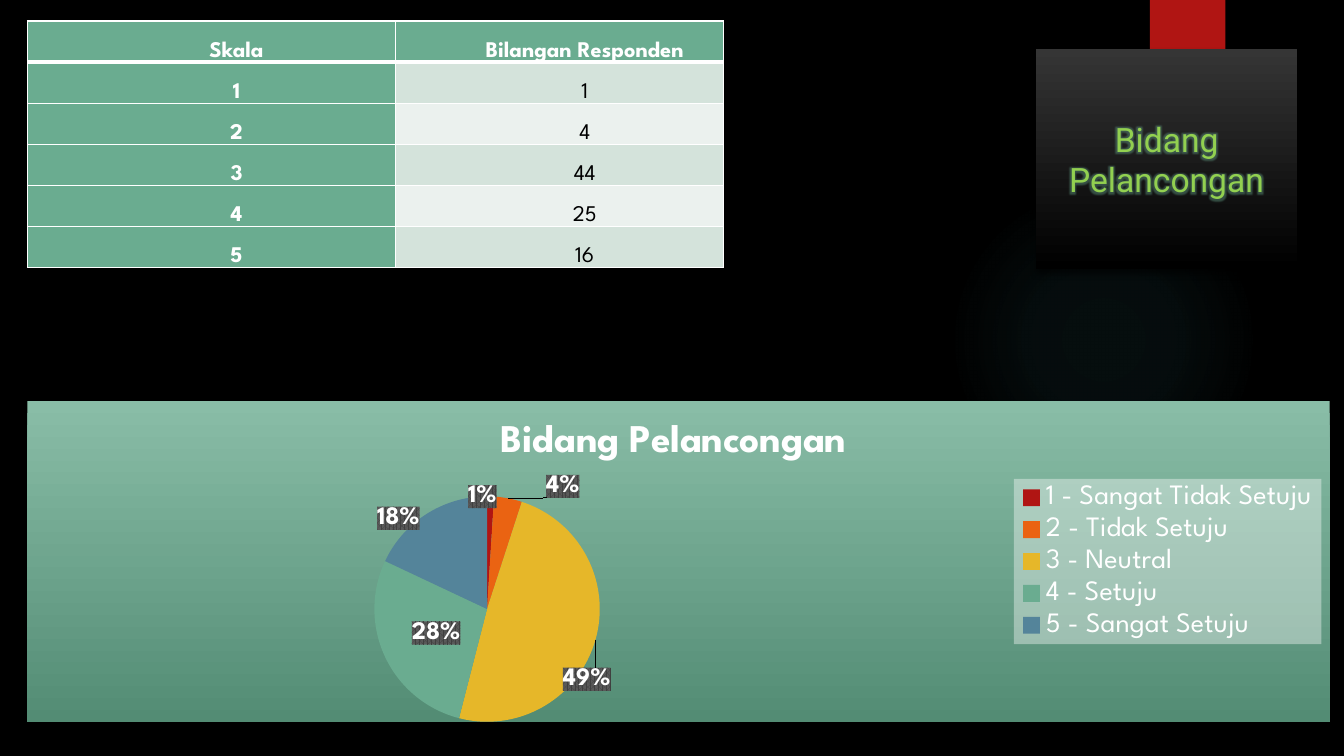
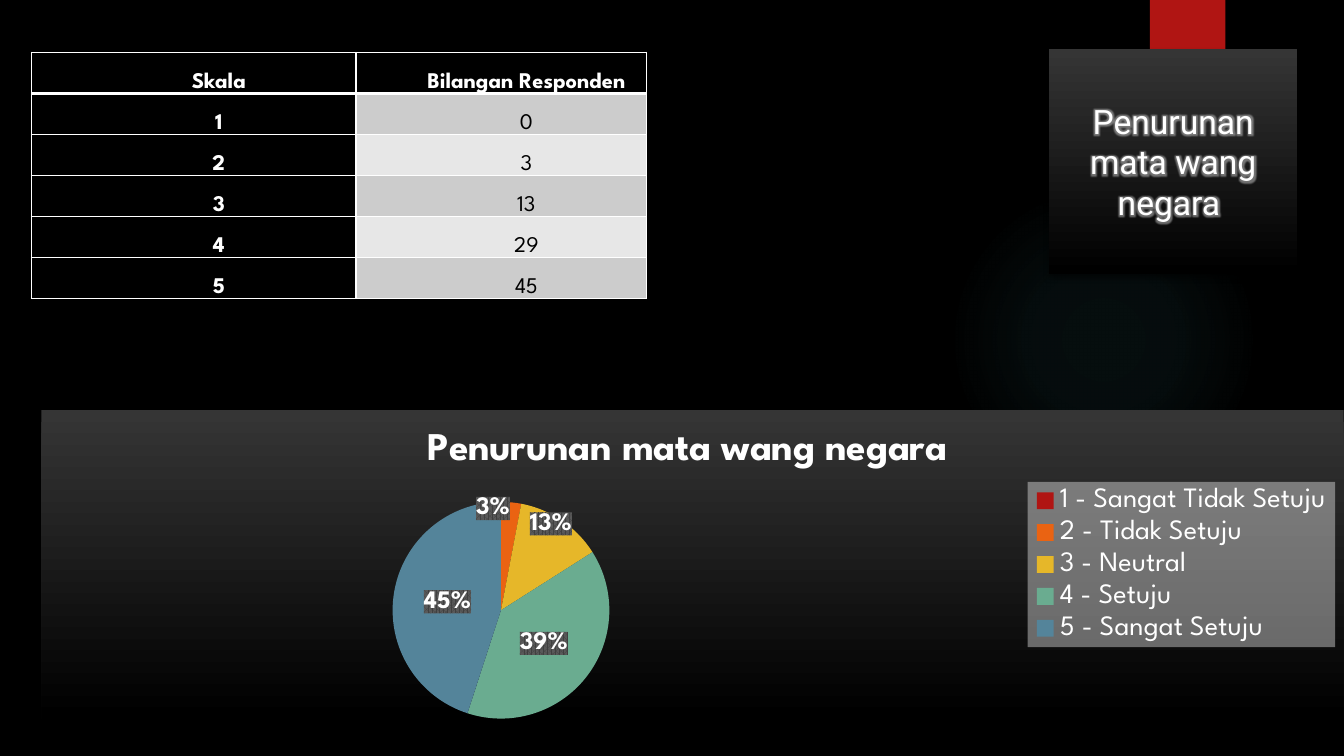
from copy import deepcopy

from pptx import Presentation
from pptx import oxml
from pptx import util as u
from pptx.chart import data as chart_data
from pptx.dml import color
from pptx.enum import chart as charts
from pptx.enum import shapes, text
from pptx.oxml import ns

COLORS = {
    "black": "000000", "white": "FFFFFF", "red": "B01513", "orange": "EA6312",
    "yellow": "E6B729", "green": "6AAC90", "blue": "54849A", "teal": "50B9C1",
    "lime": "92D050", "charcoal": "353535", "mint": "89BDA7", "moss": "538C74",
    "green_odd": "D4E3DB", "green_even": "EBF1EE", "grey_odd": "CCCCCC",
    "grey_even": "E7E7E7", "label_dark": "404040", "label_light": "595959",
}
HEADING_FONT, BODY_FONT = "Roboto", "League Spartan"
SCALE = ["1 - Sangat Tidak Setuju", "2 - Tidak Setuju", "3 - Neutral",
         "4 - Setuju", "5 - Sangat Setuju"]
SLICES = ["red", "orange", "yellow", "green", "blue"]
DARK = ("charcoal", "black")

# Boxes are left, top, width, height in centimetres. Each label shift is
# a share of the chart's size; None removes the label.
TOPICS = [
    dict(title="Bidang Pelancongan", title_box=(26.11, 1.24, 6.58, 5.54),
         title_color="lime", glow="green",
         table_at=(0.69, 0.53), columns=(9.27, 8.28), counts=[1, 4, 44, 25, 16],
         table_colors=("green", "green_odd", "green_even"),
         chart_title="Bidang Pelancongan ", chart_box=(0.69, 10.11, 32.82, 8.08),
         chart_fill=("mint", "moss"), shares=[1, 4, 49, 28, 18],
         shifts={0: (-0.005, -0.175), 1: (0.05, -0.21),
                 2: (0.035, 0.17), 4: (-0.045, -0.135)}),
    dict(title="Penurunan mata wang negara ", title_box=(26.44, 1.24, 6.25, 5.66),
         title_color="white", glow="white",
         table_at=(0.79, 1.32), columns=(8.18, 7.32), counts=[0, 3, 13, 29, 45],
         table_colors=("black", "grey_odd", "grey_even"),
         chart_title="Penurunan mata wang negara ", chart_box=(1.04, 10.34, 32.82, 7.77),
         chart_fill=DARK, shares=[0, 3, 13, 39, 45],
         shifts={0: None, 1: (-0.01, -0.155), 2: (0.015, -0.135)}),
]


# Shared helpers
def rgb(name):
    return color.RGBColor.from_string(COLORS[name])


def cm(values):
    return [u.Cm(value) for value in values]


def element(tag, inner="", attributes=""):
    return oxml.parse_xml(f"<{tag} {ns.nsdecls('a', 'c')} {attributes}>{inner}</{tag}>")


def color_xml(name, alpha=100):
    return f'<a:srgbClr val="{COLORS[name]}"><a:alpha val="{alpha * 1000}"/></a:srgbClr>'


def gradient_xml(stops, direction='<a:lin ang="5400000" scaled="0"/>'):
    """Stops are (position, colour, alpha)."""
    marks = "".join(f'<a:gs pos="{position * 1000}">{color_xml(name, alpha)}</a:gs>'
                    for position, name, alpha in stops)
    return f"<a:gradFill {ns.nsdecls('a')}><a:gsLst>{marks}</a:gsLst>{direction}</a:gradFill>"


def vertical_xml(names):
    return gradient_xml([(0, names[0], 100), (100, names[1], 100)])


def add_shadow(shape, alpha, blur, distance):
    shape.element.spPr.append(element(
        "a:effectLst",
        f'<a:outerShdw blurRad="{u.Pt(blur)}" dist="{u.Pt(distance)}" dir="5400000" '
        f'algn="ctr" rotWithShape="0">{color_xml("black", alpha)}</a:outerShdw>'))


def style_font(font, size, name, fill, bold=False):
    font.size, font.name, font.bold = u.Pt(size), name, bold
    font.color.rgb = rgb(fill)


def write(frame, content, *, size, font, fill, bold=False, align=text.PP_ALIGN.CENTER,
          spacing=None, indent=0):
    para = frame.paragraphs[0]
    para.alignment = align
    if spacing:
        para.line_spacing = spacing
    if indent:
        properties = para._p.get_or_add_pPr()
        properties.set("marL", str(u.Cm(indent)))
        properties.set("indent", "0")
    span = para.add_run()
    span.text = content
    style_font(span.font, size, font, fill, bold)
    return span


# Background, soft light and red ribbon, kept on the layout
def dress_layout(deck, page):
    background = deck.slide_master.background.fill
    background.solid()
    background.fore_color.rgb = rgb("black")

    light = page.shapes.add_shape(shapes.MSO_SHAPE.OVAL, *cm((23.9, 4.65, 7.82, 7.82)))
    center = ('<a:path path="circle"><a:fillToRect l="50000" t="50000" '
              'r="50000" b="50000"/></a:path>')
    light.element.spPr.append(oxml.parse_xml(gradient_xml(
        [(0, "teal", 7), (36, "teal", 6), (69, "teal", 0)], center)))
    light.shadow.inherit = False

    ribbon = page.shapes.add_shape(shapes.MSO_SHAPE.RECTANGLE, *cm((28.98, 0, 1.9, 3.17)))
    ribbon.fill.solid()
    ribbon.fill.fore_color.rgb = rgb("red")
    for number, shape in enumerate((light, ribbon), start=90):
        shape.line.fill.background()
        shape.element.nvSpPr.cNvPr.set("id", str(number))
        page.slide_layout.shapes.element.append(shape.element)
    add_shadow(ribbon, 45, 3, 2)


# Title card
def place_title(page, box, content, fill, glow):
    title = page.shapes.title
    title.left, title.top, title.width, title.height = cm(box)
    title.element.spPr.append(oxml.parse_xml(vertical_xml(DARK)))
    title.line.fill.background()
    add_shadow(title, 60, 5, 3)
    frame = title.text_frame
    frame.word_wrap = True
    frame.auto_size = text.MSO_AUTO_SIZE.NONE
    frame.vertical_anchor = text.MSO_ANCHOR.MIDDLE
    span = write(frame, content, size=24, font=HEADING_FONT, fill=fill)
    halo = f'<a:glow rad="{u.Pt(5)}">{color_xml(glow, 40)}</a:glow>'
    span.font._element.find(ns.qn("a:solidFill")).addnext(element("a:effectLst", halo))


# Table of answers
def add_borders(cell, widths):
    properties = cell._tc.get_or_add_tcPr()
    for side, width in zip("LRTB", widths):
        properties.append(element(
            f"a:ln{side}", f"<a:solidFill>{color_xml('white')}</a:solidFill>",
            f'w="{u.Pt(width)}"'))


def place_table(page, at, columns, counts, fills):
    strong, odd, even = fills
    rows = [("Skala", "Bilangan Responden")]
    rows += [(str(grade), str(count)) for grade, count in enumerate(counts, start=1)]
    row_height = 1.03
    size = (sum(columns), row_height * len(rows))
    table = page.shapes.add_table(len(rows), len(columns), *cm(at + size)).table
    for column, width in zip(table.columns, columns):
        column.width = u.Cm(width)
    for r, row in enumerate(rows):
        table.rows[r].height = u.Cm(row_height)
        for c, content in enumerate(row):
            cell = table.cell(r, c)
            heading = r == 0 or c == 0
            cell.margin_left = cell.margin_right = u.Cm(0.18)
            cell.margin_top = cell.margin_bottom = 0
            add_borders(cell, (1, 1, 3 if r == 1 else 1, 3 if r == 0 else 1))
            cell.fill.solid()
            cell.fill.fore_color.rgb = rgb(strong if heading else odd if r % 2 else even)
            write(cell.text_frame, content, size=16, font=BODY_FONT, bold=heading,
                  fill="white" if heading else "black", spacing=2.0, indent=1.27)


# Pie chart
def layout_xml(**values):
    inner = "".join(f'<c:{key} val="{value}"/>' for key, value in values.items())
    return f"<c:layout><c:manualLayout>{inner}</c:manualLayout></c:layout>"


def shift_labels(labels, shifts):
    """Give the labels their backing, then move or remove single ones."""
    backing = element("c:spPr", f'<a:pattFill prst="pct75">'
                      f'<a:fgClr>{color_xml("label_dark")}</a:fgClr>'
                      f'<a:bgClr>{color_xml("label_light")}</a:bgClr></a:pattFill>')
    letters = labels.find(ns.qn("c:txPr"))
    letters.addprevious(backing)
    flags = "".join(f'<c:show{flag} val="{int(flag == "Percent")}"/>' for flag in
                    ("LegendKey", "Val", "CatName", "SerName", "Percent", "BubbleSize"))
    for place, (index, shift) in enumerate(shifts.items()):
        number = f'<c:idx val="{index}"/>'
        if shift is None:
            label = element("c:dLbl", number + '<c:delete val="1"/>')
        else:
            moved = layout_xml(x=shift[0], y=shift[1])
            label = element("c:dLbl", number + moved + '<c:dLblPos val="ctr"/>' + flags)
            position = label.find(ns.qn("c:dLblPos"))
            position.addprevious(deepcopy(backing))
            position.addprevious(deepcopy(letters))
        labels.insert(place, label)


def place_chart(page, box, heading, shares, fills, shifts):
    data = chart_data.CategoryChartData()
    data.categories = SCALE
    data.add_series("Series 1", shares)
    chart = page.shapes.add_chart(charts.XL_CHART_TYPE.PIE, *cm(box), data).chart
    style_font(chart.font, 10, BODY_FONT, "white")
    root = chart.element
    root.find(ns.qn("c:chart")).addnext(element("c:spPr", vertical_xml(fills)))

    chart.has_title = True
    write(chart.chart_title.text_frame, heading, size=28, font=BODY_FONT,
          fill="white", bold=True)
    chart.chart_title.include_in_layout = False

    chart.has_legend = True
    legend = chart.legend
    legend.position = charts.XL_LEGEND_POSITION.RIGHT
    legend.include_in_layout = False
    style_font(legend.font, 20, BODY_FONT, "white")
    root.xpath("//c:legend/c:txPr")[0].addprevious(element(
        "c:spPr", f"<a:solidFill>{color_xml('white', 39)}</a:solidFill>"))

    area = root.xpath("//c:plotArea")[0]
    for old in area.findall(ns.qn("c:layout")):
        area.remove(old)
    area.insert(0, element("c:layout", "<c:manualLayout>"
                           '<c:layoutTarget val="inner"/><c:xMode val="edge"/>'
                           '<c:yMode val="edge"/><c:x val="0"/><c:y val="0.297"/>'
                           '<c:w val="0.706"/><c:h val="0.703"/></c:manualLayout>'))

    plot = chart.plots[0]
    plot.vary_by_categories = True
    series = plot.series[0]
    for index, name in enumerate(SLICES):
        shape_format = series.points[index].format
        shape_format.fill.solid()
        shape_format.fill.fore_color.rgb = rgb(name)
        shape_format.line.fill.background()
    labels = series.data_labels
    labels.show_percentage, labels.show_value = True, False
    labels.position = charts.XL_LABEL_POSITION.CENTER
    style_font(labels.font, 18, BODY_FONT, "white", bold=True)
    shift_labels(root.xpath("//c:ser/c:dLbls")[0], shifts)


def build_topic(page, topic):
    place_table(page, topic["table_at"], topic["columns"], topic["counts"],
                topic["table_colors"])
    place_chart(page, topic["chart_box"], topic["chart_title"], topic["shares"],
                topic["chart_fill"], topic["shifts"])
    place_title(page, topic["title_box"], topic["title"], topic["title_color"],
                topic["glow"])


def main():
    deck = Presentation()
    deck.slide_width, deck.slide_height = cm((33.87, 19.05))
    title_only = deck.slide_layouts[5]
    pages = [deck.slides.add_slide(title_only) for _ in TOPICS]
    dress_layout(deck, pages[0])
    for page, topic in zip(pages, TOPICS):
        build_topic(page, topic)
    deck.save("out.pptx")


if __name__ == "__main__":
    main()
